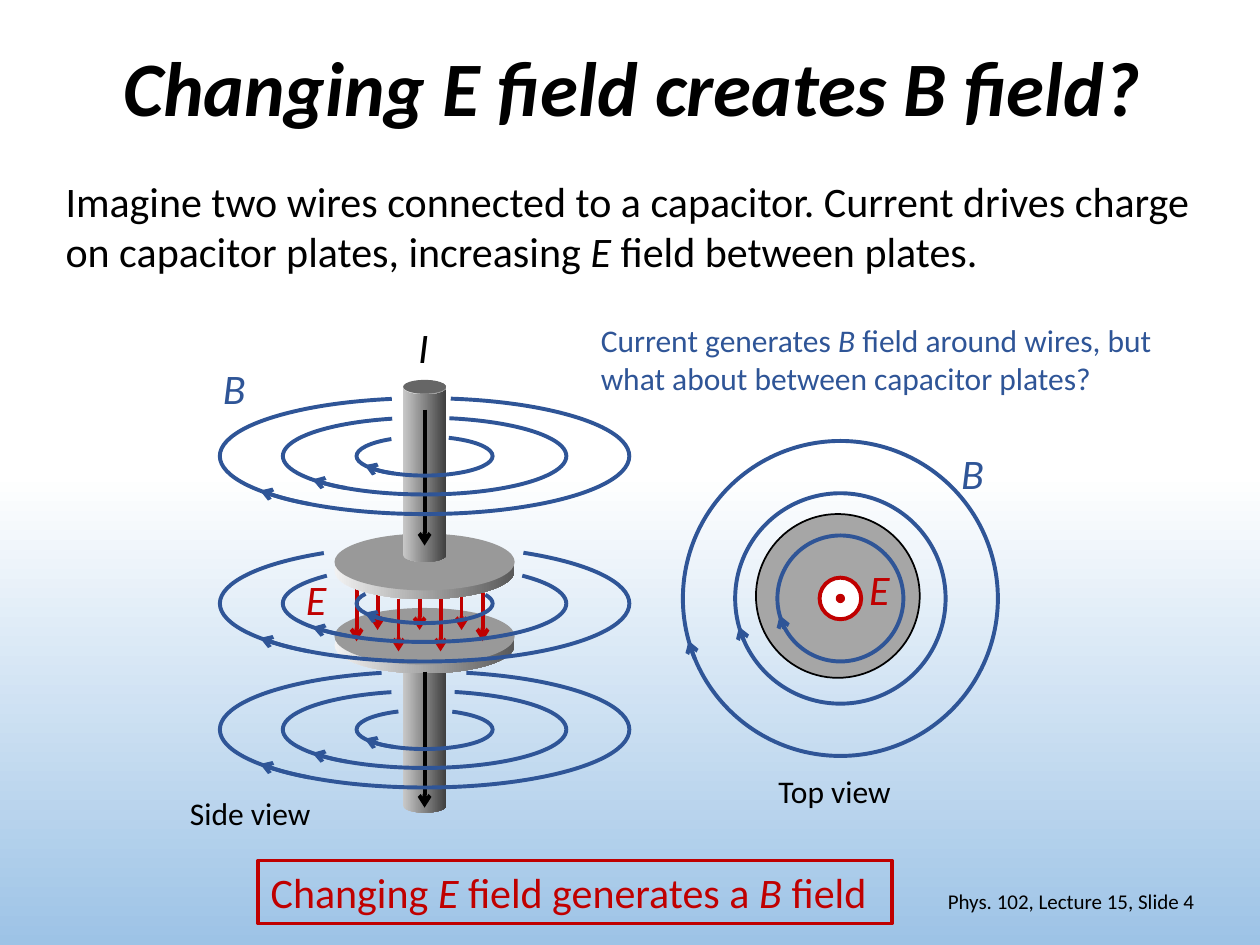
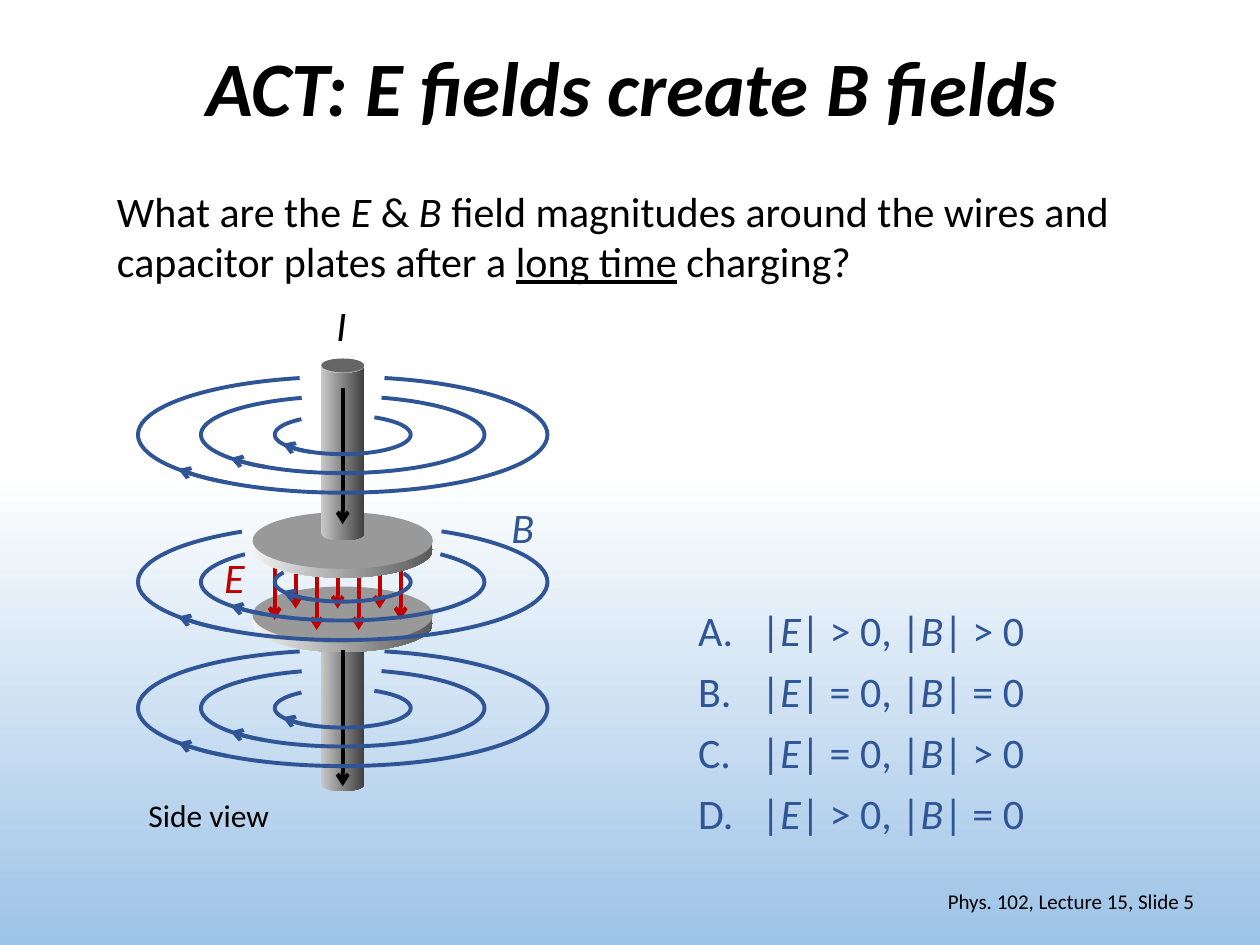
"""Build two physics slides on the magnetic field around a charging capacitor."""
from lxml import etree
from pptx import Presentation
from pptx.dml.color import RGBColor
from pptx.enum.shapes import MSO_CONNECTOR, MSO_SHAPE
from pptx.enum.text import MSO_ANCHOR, MSO_AUTO_SIZE, PP_ALIGN
from pptx.oxml.ns import qn
from pptx.util import Inches, Pt

BLACK = RGBColor(0x00, 0x00, 0x00)
WHITE = RGBColor(0xFF, 0xFF, 0xFF)
SKY = RGBColor(0x9D, 0xC3, 0xE6)
BLUE = RGBColor(0x2F, 0x55, 0x97)
RED = RGBColor(0xC0, 0x00, 0x00)
GREY = RGBColor(0xA6, 0xA6, 0xA6)
FACE_GREY = RGBColor(0x99, 0x99, 0x99)
LID_GREY = RGBColor(0x66, 0x66, 0x66)
WIRE_SHADES = (RGBColor(0xC8, 0xC8, 0xC8), RGBColor(0x40, 0x40, 0x40))
RIM_SHADES = (RGBColor(0xF2, 0xF2, 0xF2), RGBColor(0x59, 0x59, 0x59))

ARC, CAN, OVAL, RECTANGLE = MSO_SHAPE.ARC, MSO_SHAPE.CAN, MSO_SHAPE.OVAL, MSO_SHAPE.RECTANGLE
STRAIGHT = MSO_CONNECTOR.STRAIGHT
LEFT, CENTER, RIGHT = PP_ALIGN.LEFT, PP_ALIGN.CENTER, PP_ALIGN.RIGHT
TOP, MIDDLE = MSO_ANCHOR.TOP, MSO_ANCHOR.MIDDLE
NO_FIT = MSO_AUTO_SIZE.NONE

FONT = "Calibri"
THICK = 2.25
RING_SIZES = ((3.25, 0.92), (2.25, 0.61), (1.08, 0.31))
RING_ARROWS = ((11.85, 22.5), (11.8, 22.4), (8.7, 29.4))
CIRCLE_ARROW = (15.6, 22.5)
PLATE_GAPS = ((333.4, 207.2), (344.1, 195.9), (350.7, 188.2))
FIRST_TOP_GAPS = ((299.8, 245.5), (310.9, 236.8), (332.8, 217.0))
FIRST_BOTTOM_GAPS = ((307.2, 233.6), (311.6, 231.3), (325.5, 212.8))
SECOND_GAPS = ((307.2, 233.6), (318.1, 223.6), (339.4, 208.6))
FIELD_TOPS = (4.67, 4.58, 4.75, 4.58, 4.75, 4.58, 4.67)


class Lecture:
    """Hold the shared style and the current slide."""

    def __init__(self):
        self.deck = Presentation()
        self.deck.slide_width, self.deck.slide_height = Inches(10), Inches(7.5)
        fill = self.deck.slide_master.background.fill
        self.shade(fill, (WHITE, SKY), 270)
        fill.gradient_stops[0].position = 0.5
        self.page = None

    def start(self, title, number):
        self.page = self.deck.slides.add_slide(self.deck.slide_layouts[1])
        self.fill_placeholder(0, (0.71, 0, 8.62, 1.45), [title], size=44, bold=True, italic=True,
                              align=CENTER, anchor=MIDDLE, spacing=0.9)
        self.text((7.06, 6.95, 2.52, 0.4), f"Phys. 102, Lecture 15, Slide {number}", size=12,
                  align=RIGHT, anchor=MIDDLE)

    def shade(self, fill, colours, angle=0):
        fill.gradient()
        fill.gradient_angle = angle
        for stop, colour in zip(fill.gradient_stops, colours):
            stop.color.rgb = colour

    def set_text(self, frame, lines, size=24, colour=BLACK, bold=False, italic=False, align=LEFT,
                 anchor=TOP, spacing=1.0, after=0, lettered=False, wrap=True):
        layout = {"word_wrap": wrap, "auto_size": NO_FIT, "vertical_anchor": anchor}
        for name, value in layout.items():
            setattr(frame, name, value)
        for index, line in enumerate(lines):
            para = frame.paragraphs[0] if index == 0 else frame.add_paragraph()
            form = {"alignment": align, "line_spacing": spacing,
                    "space_before": Pt(0), "space_after": Pt(after)}
            for name, value in form.items():
                setattr(para, name, value)
            properties = para._p.get_or_add_pPr()
            indent = Inches(0.5) if lettered else 0
            properties.set("marL", str(indent))
            properties.set("indent", str(-indent))
            if lettered:
                etree.SubElement(properties, qn("a:buFont"), typeface="+mj-lt")
                etree.SubElement(properties, qn("a:buAutoNum"), type="alphaUcPeriod")
            else:
                etree.SubElement(properties, qn("a:buNone"))
            for position, piece in enumerate(line.split("*")):
                if not piece:
                    continue
                underlined = piece.startswith("_")
                span = para.add_run()
                span.text = piece.strip("_")
                style = {"name": FONT, "size": Pt(size), "bold": bold, "underline": underlined,
                         "italic": italic or (position % 2 == 1 and not underlined)}
                for name, value in style.items():
                    setattr(span.font, name, value)
                span.font.color.rgb = colour

    def fill_placeholder(self, index, place, lines, **style):
        box = self.page.placeholders[index]
        for name, value in zip(("left", "top", "width", "height"), place):
            setattr(box, name, Inches(value))
        self.set_text(box.text_frame, lines, **style)

    def text(self, place, line, **style):
        box = self.page.shapes.add_textbox(*map(Inches, place))
        self.set_text(box.text_frame, [line], **style)

    def label(self, place, line, **style):
        self.text(place, line, wrap=False, **style)

    def shape(self, kind, place, fill=None, line=None, weight=1):
        shape = self.page.shapes.add_shape(kind, *map(Inches, place))
        shape.shadow.inherit = False
        if fill is None:
            shape.fill.background()
        elif fill in (WIRE_SHADES, RIM_SHADES):
            self.shade(shape.fill, fill)
        else:
            shape.fill.solid()
            shape.fill.fore_color.rgb = fill
        if line is None:
            shape.line.fill.background()
        else:
            shape.line.color.rgb = line
            shape.line.width = Pt(weight)
        return shape

    def centred(self, centre, size):
        return (centre[0] - size[0] / 2, centre[1] - size[1] / 2, *size)

    def oval(self, centre, size, **style):
        return self.shape(OVAL, self.centred(centre, size), **style)

    def arc(self, centre, size, angles, pointed=False):
        arc = self.shape(ARC, self.centred(centre, size), line=BLUE, weight=THICK)
        for index, angle in enumerate(angles):
            arc.adjustments[index] = angle * 0.6
        arc._element.spPr.find(qn("a:xfrm")).set("flipH", "1")
        if pointed:
            etree.SubElement(arc.line._get_or_add_ln(), qn("a:headEnd"), type="arrow")

    def arrow(self, x, top, bottom, colour):
        arrow = self.page.shapes.add_connector(STRAIGHT, *map(Inches, (x, top, x, bottom)))
        arrow.line.color.rgb = colour
        arrow.line.width = Pt(THICK)
        etree.SubElement(arrow.line._get_or_add_ln(), qn("a:tailEnd"), type="arrow")
        etree.SubElement(arrow._element.spPr, qn("a:effectLst"))

    def rings(self, centre, gaps):
        for size, gap in zip(RING_SIZES, gaps):
            self.arc(centre, size, gap)
        for size, angles in zip(RING_SIZES, RING_ARROWS):
            self.arc(centre, size, angles, pointed=True)

    def wire(self, x, top, bottom):
        wire = self.shape(CAN, (x - 0.17, top, 0.34, bottom - top), WIRE_SHADES)
        wire.adjustments[0] = 0.32
        self.oval((x, top + 0.05), (0.34, 0.11), fill=LID_GREY)

    def plate(self, x, top):
        self.oval((x, top + 0.3), (1.43, 0.45), fill=RIM_SHADES)
        self.oval((x, top + 0.23), (1.43, 0.45), fill=FACE_GREY)

    def side_view(self, dx, dy, top_gaps, bottom_gaps):
        x = 3.37 + dx
        self.wire(x, 5 + dy, 6.45 + dy)
        self.plate(x, 4.82 + dy)
        for index, top in enumerate(FIELD_TOPS):
            self.arrow(2.83 + dx + index / 6, top + dy, top + 0.42 + dy, RED)
        self.plate(x, 4.23 + dy)
        self.wire(x, 3.02 + dy, 4.46 + dy)
        for top in (3.25, 5.33):
            self.arrow(x, top + dy, top + 1.08 + dy, BLACK)
        for y, gaps in ((3.62, top_gaps), (4.79, PLATE_GAPS), (5.79, bottom_gaps)):
            self.rings((x, y + dy), gaps)
        self.label((3.22 + dx, 2.5 + dy, 0.29, 0.5), "*I*")
        self.label((2.33 + dx, 4.5 + dy, 0.37, 0.5), "*E*", colour=RED)

    def top_view(self, centre):
        self.oval((6.65, 4.73), (1.3, 1.3), fill=GREY, line=BLACK)
        for diameter in (1, 1.67, 2.5):
            size = (diameter, diameter)
            self.oval(centre, size, line=BLUE, weight=THICK)
            self.arc(centre, size, CIRCLE_ARROW, pointed=True)
        self.oval(centre, (0.33, 0.33), fill=WHITE, line=RED, weight=THICK)
        self.oval(centre, (0.06, 0.06), fill=RED, line=RED)
        self.label((7.53, 3.5, 0.38, 0.5), "*B*", colour=BLUE)
        self.label((6.8, 4.42, 0.37, 0.5), "*E*", colour=RED)
        self.label((6.08, 6.08, 1.1, 0.4), "Top view", size=18)


def main():
    lecture = Lecture()

    lecture.start("Changing E field creates B field?", 4)
    lecture.fill_placeholder(1, (0.42, 1.34, 9.17, 0.91), [
        "Imagine two wires connected to a capacitor. Current drives charge on capacitor plates, "
        "increasing *E* field between plates."])
    lecture.top_view((6.67, 4.75))
    lecture.side_view(0, 0, FIRST_TOP_GAPS, FIRST_BOTTOM_GAPS)
    lecture.label((1.67, 2.83, 0.38, 0.57), "*B*", colour=BLUE)
    lecture.label((1.41, 6.25, 1.17, 0.4), "Side view", size=18)
    lecture.text((4.67, 2.5, 4.67, 0.71), "Current generates *B* field around wires, but what about "
                 "between capacitor plates?", size=18, colour=BLUE)
    answer = lecture.shape(RECTANGLE, (2.05, 6.83, 5.03, 0.5), line=RED, weight=THICK)
    lecture.set_text(answer.text_frame, ["Changing *E* field generates a *B* field"], colour=RED)

    lecture.start("ACT: E fields create B fields", 5)
    lecture.text((0.83, 1.42, 8.42, 0.91), "What are the *E* & *B* field magnitudes around the wires "
                 "and capacitor plates after a *_long time_* charging?")
    lecture.side_view(-0.65, -0.17, SECOND_GAPS, SECOND_GAPS)
    lecture.label((3.96, 3.93, 0.38, 0.57), "*B*", colour=BLUE)
    lecture.label((1.08, 6.27, 1.17, 0.4), "Side view", size=18)
    choices = [f"|*E*| {electric} 0, |*B*| {magnetic} 0"
               for electric, magnetic in (">>", "==", "=>", ">=")]
    lecture.fill_placeholder(1, (5.44, 4.75, 3.23, 1.97), choices, colour=BLUE, after=6,
                             lettered=True)

    lecture.deck.save("out.pptx")


if __name__ == "__main__":
    main()
